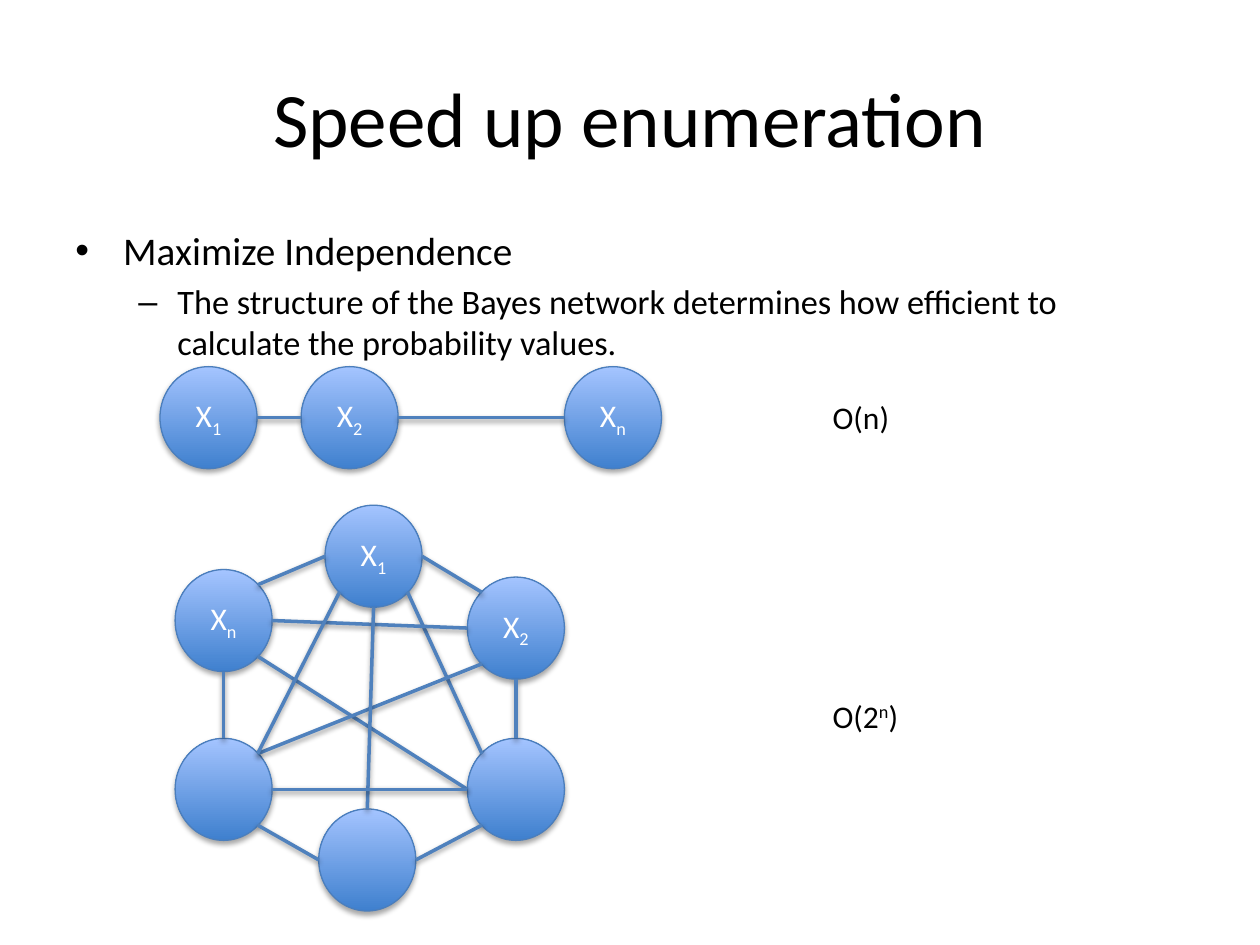
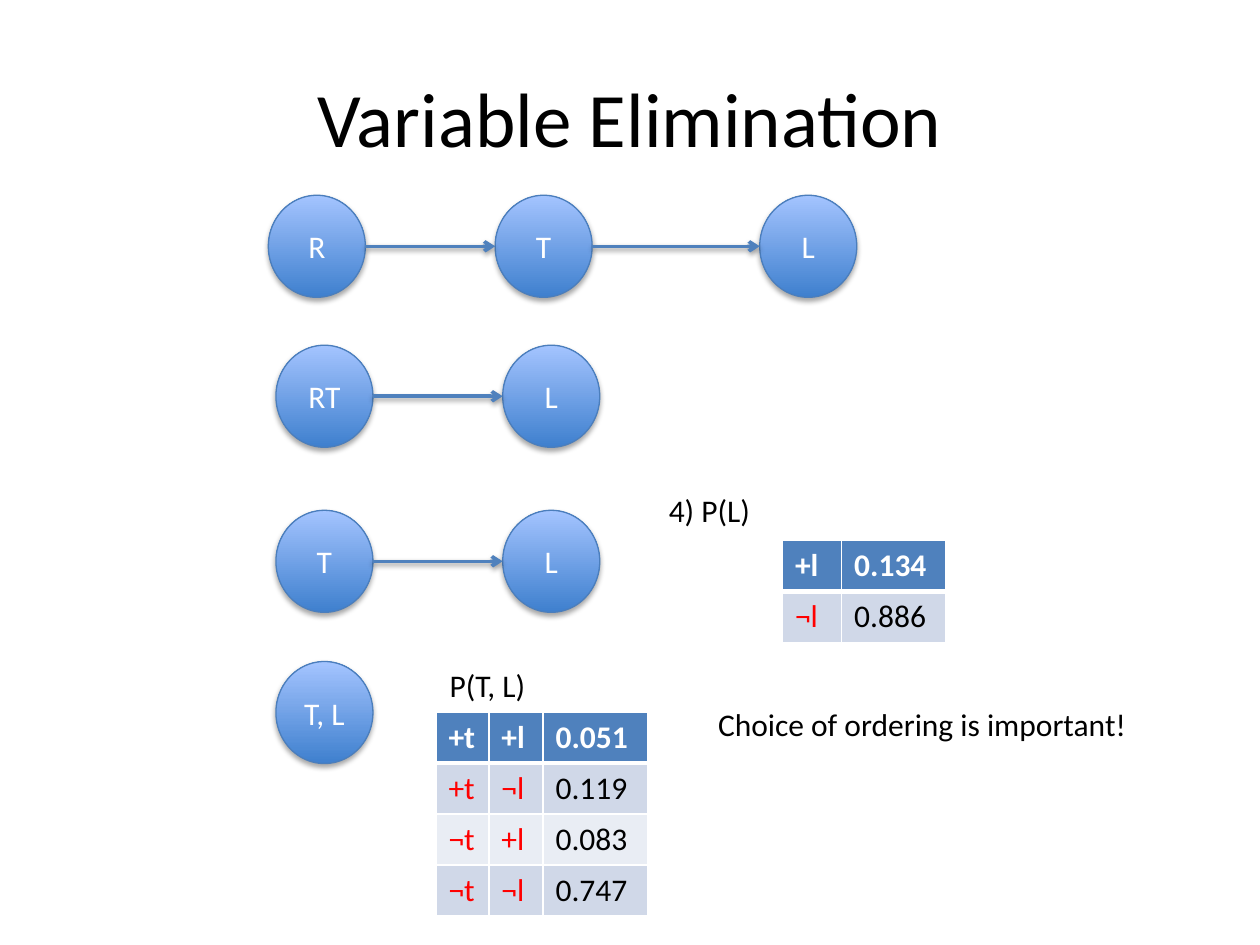
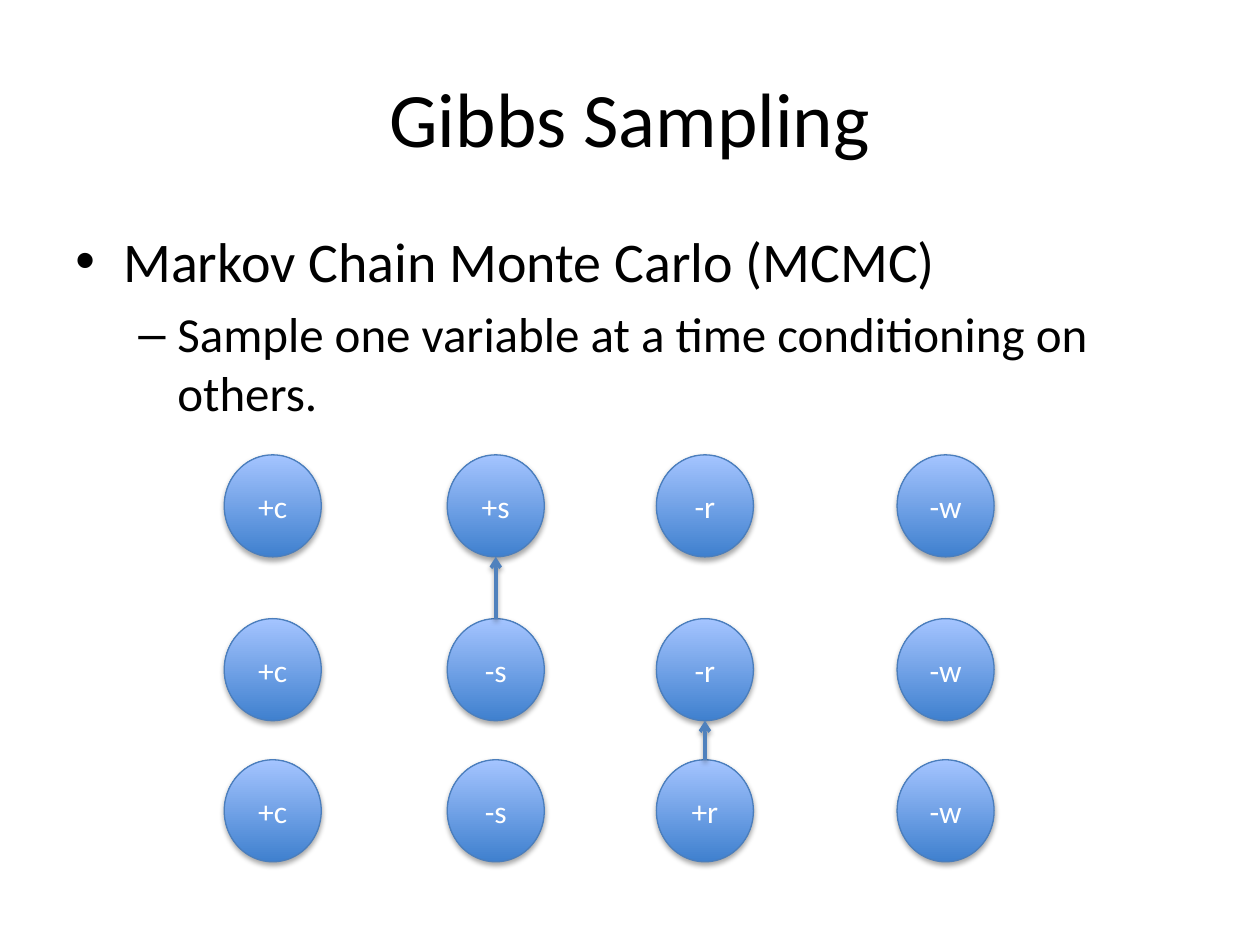
from pptx import Presentation
from pptx import util as u
from pptx.dml.color import RGBColor
from pptx.enum import shapes, text
from pptx.oxml import parse_xml
from pptx.oxml.ns import nsdecls, qn

FONT = "Calibri"
BLACK, WHITE, RED, BLUE = "000000", "FFFFFF", "FF0000", "4F81BD"
NODE_TOP, NODE_BOTTOM, NODE_EDGE = "A4C4FF", "3F80CE", "4B7EBC"
BANDS = ["E9EDF4", "D0D8E8"]
NODE_W, NODE_H = 0.77, 0.81
DIAGONAL = 0.35  # share of the diameter from the centre to a diagonal point

X1, X2, XN = ([("X", 0), (sub, -25)] for sub in "12n")


def rgb(color):
    return RGBColor.from_string(color)


def set_font(p, size, color=BLACK, bold=False):
    p.font.name, p.font.size, p.font.bold = FONT, u.Pt(size), bold
    p.font.color.rgb = rgb(color)


def write(p, content):
    """Content is a string or a list of (text, baseline percent)."""
    runs = [(content, 0)] if isinstance(content, str) else content
    for words, base in runs:
        r = p.add_run()
        r.text = words
        if base:
            r._r.get_or_add_rPr().set("baseline", str(base * 1000))


def add_shadow(sp, alpha, distance):
    pr = sp._element.spPr
    for old in pr.findall(qn("a:effectLst")):
        pr.remove(old)
    pr.append(parse_xml(
        f'<a:effectLst {nsdecls("a")}><a:outerShdw blurRad="{u.Pt(3.1)}" '
        f'dist="{u.Pt(distance)}" dir="5400000" rotWithShape="0">'
        f'<a:srgbClr val="{BLACK}"><a:alpha val="{alpha * 1000}"/></a:srgbClr>'
        '</a:outerShdw></a:effectLst>'))


def textbox(s, box, wrap=True):
    tf = s.shapes.add_textbox(*map(u.Inches, box)).text_frame
    tf.word_wrap = wrap
    return tf


def title(s, words):
    tf = textbox(s, (0.5, 0.3, 9, 1.25))
    tf.vertical_anchor = text.MSO_ANCHOR.MIDDLE
    p = tf.paragraphs[0]
    p.alignment = text.PP_ALIGN.CENTER
    set_font(p, 44)
    write(p, words)


def label(s, box, content, wrap=True):
    p = textbox(s, box, wrap).paragraphs[0]
    set_font(p, 18)
    write(p, content)


def bullets(s, height, point, detail, sizes):
    """A bulleted point with one dashed detail below it."""
    tf = textbox(s, (0.5, 1.75, 9, height))
    levels = [(point, "•", 0.38, -0.38), (detail, "–", 0.81, -0.31)]
    for level, (words, mark, margin, indent) in enumerate(levels):
        p = tf.add_paragraph() if level else tf.paragraphs[0]
        p.level = level
        p.space_before = u.Pt(0.2 * sizes[level])
        pr = p._p.get_or_add_pPr()
        pr.set("marL", str(u.Inches(margin)))
        pr.set("indent", str(u.Inches(indent)))
        pr.append(parse_xml(f'<a:buFont {nsdecls("a")} typeface="Arial"/>'))
        pr.append(parse_xml(f'<a:buChar {nsdecls("a")} char="{mark}"/>'))
        set_font(p, sizes[level])
        write(p, words)


def node(s, left, top, content=""):
    sp = s.shapes.add_shape(shapes.MSO_SHAPE.OVAL,
                            *map(u.Inches, (left, top, NODE_W, NODE_H)))
    sp.fill.gradient()
    sp.fill.gradient_angle = 90
    for stop, position, color in zip(sp.fill.gradient_stops, (0, 1),
                                     (NODE_BOTTOM, NODE_TOP)):
        stop.position, stop.color.rgb = position, rgb(color)
    sp.line.color.rgb, sp.line.width = rgb(NODE_EDGE), u.Pt(0.75)
    add_shadow(sp, 35, 1.8)
    if content:
        tf = sp.text_frame
        tf.vertical_anchor = text.MSO_ANCHOR.MIDDLE
        p = tf.paragraphs[0]
        p.alignment = text.PP_ALIGN.CENTER
        set_font(p, 18, WHITE)
        write(p, content)


def rim(corner, side):
    """Point on a node's rim at a compass side, such as N or SE."""
    reach = DIAGONAL if len(side) == 2 else 0.5
    dx = ("E" in side) - ("W" in side)
    dy = ("S" in side) - ("N" in side)
    return (corner[0] + NODE_W * (0.5 + reach * dx),
            corner[1] + NODE_H * (0.5 + reach * dy))


def link(s, start, end, arrow=False):
    c = s.shapes.add_connector(shapes.MSO_CONNECTOR.STRAIGHT,
                               *map(u.Inches, start + end))
    c.line.color.rgb, c.line.width = rgb(BLUE), u.Pt(2)
    if arrow:
        c.line._get_or_add_ln().append(
            parse_xml(f'<a:tailEnd {nsdecls("a")} type="arrow"/>'))
    add_shadow(c, 38, 1.6)


def chain(s, left, top, nodes, arrow=True):
    """A row of linked nodes, given as (offset from left, content)."""
    corners = [(left + offset, top) for offset, _ in nodes]
    for corner, (_, content) in zip(corners, nodes):
        node(s, *corner, content)
    for a, b in zip(corners, corners[1:]):
        link(s, rim(a, "E"), rim(b, "W"), arrow)


def full_network(s, left, top):
    nodes = {"bottom": (1.14, 2.41, ""), "top": (1.19, 0, X1),
             "left": (0, 0.51, XN), "right": (2.32, 0.57, X2),
             "low right": (2.32, 1.85, ""), "low left": (0, 1.85, "")}
    edges = [("top", "E", "right", "NW"), ("top", "W", "left", "NE"),
             ("top", "SE", "low right", "NW"), ("right", "S", "low right", "N"),
             ("left", "S", "low left", "N"), ("low left", "SE", "bottom", "W"),
             ("bottom", "E", "low right", "SW"), ("left", "E", "right", "W"),
             ("left", "SE", "low right", "W"), ("low left", "NE", "right", "SW"),
             ("bottom", "N", "top", "S"), ("low right", "W", "low left", "E"),
             ("top", "SW", "low left", "NE")]
    corners = {k: (left + x, top + y) for k, (x, y, _) in nodes.items()}
    for name, (_, _, content) in nodes.items():
        node(s, *corners[name], content)
    for a, side_a, b, side_b in edges:
        link(s, rim(corners[a], side_a), rim(corners[b], side_b))


def cell_borders(cell, row):
    widths = {"L": 1, "R": 1, "T": 3 if row == 1 else 1, "B": 1 if row else 3}
    pr = cell._tc.get_or_add_tcPr()
    for side, width in widths.items():
        pr.append(parse_xml(
            f'<a:ln{side} {nsdecls("a")} w="{u.Pt(width)}"><a:solidFill>'
            f'<a:srgbClr val="{WHITE}"/></a:solidFill></a:ln{side}>'))


def probability_table(s, left, top, height, widths, rows):
    """First row is the header; the last column holds the probability."""
    box = map(u.Inches, (left, top, sum(widths), height))
    table = s.shapes.add_table(len(rows), len(widths), *box).table
    for column, width in zip(table.columns, widths):
        column.width = u.Inches(width)
    for i, row in enumerate(rows):
        for j, words in enumerate(row):
            cell = table.cell(i, j)
            cell_borders(cell, i)
            cell.margin_right = u.Inches(0.05)  # keeps narrow cells on one line
            cell.fill.solid()
            cell.fill.fore_color.rgb = rgb(BANDS[i % 2] if i else BLUE)
            value_color = BLACK if j == len(row) - 1 else RED
            p = cell.text_frame.paragraphs[0]
            set_font(p, 18, value_color if i else WHITE, bold=i == 0)
            write(p, words)


def sample_grid(s, left, top):
    columns, rows = (0, 1.77, 3.43, 5.34), (0, 1.3, 2.42)
    samples = [("+c", "+s", "-r", "-w"), ("+c", "-s", "-r", "-w"),
               ("+c", "-s", "+r", "-w")]
    for y, sample in zip(rows, samples):
        for x, value in zip(columns, sample):
            node(s, left + x, top + y, value)
    for i in range(1, len(rows)):
        for x, old, new in zip(columns, samples[i - 1], samples[i]):
            if old != new:
                link(s, rim((left + x, top + rows[i]), "N"),
                     rim((left + x, top + rows[i - 1]), "S"), arrow=True)


def enumeration_slide(s):
    title(s, "Speed up enumeration")
    bullets(s, 1.09, "Maximize Independence",
            "The structure of the Bayes network determines how efficient to "
            "calculate the probability values.", (22.4, 19.6))
    chain(s, 1.27, 2.91, [(0, X1), (1.12, X2), (3.21, XN)], arrow=False)
    label(s, (6.51, 3.11, 0.65, 0.4), "O(n)", wrap=False)
    full_network(s, 1.39, 4.01)
    label(s, (6.51, 5.48, 0.74, 0.4), [("O(2", 0), ("n", 30), (")", 0)],
          wrap=False)


def elimination_slide(s):
    title(s, "Variable Elimination")
    chain(s, 2.13, 1.55, [(0, "R"), (1.8, "T"), (3.9, "L")])
    chain(s, 2.19, 2.74, [(0, "RT"), (1.8, "L")])
    chain(s, 2.19, 4.05, [(0, "T"), (1.8, "L")])
    chain(s, 2.19, 5.25, [(0, "T, L")])
    label(s, (5.21, 3.85, 3.43, 0.4), "4) P(L)")
    probability_table(s, 6.21, 4.29, 0.81, (0.47, 0.83),
                      [("+l", "0.134"), ("¬l", "0.886")])
    label(s, (3.47, 5.24, 0.81, 0.4), "P(T, L)", wrap=False)
    probability_table(s, 3.46, 5.65, 1.62, (0.42, 0.43, 0.83),
                      [("+t", "+l", "0.051"), ("+t", "¬l", "0.119"),
                       ("¬t", "+l", "0.083"), ("¬t", "¬l", "0.747")])
    label(s, (5.6, 5.55, 3.82, 0.4), "Choice of ordering is important!")


def sampling_slide(s):
    title(s, "Gibbs Sampling")
    bullets(s, 1.72, "Markov Chain Monte Carlo (MCMC)",
            "Sample one variable at a time conditioning on others.", (32, 28))
    sample_grid(s, 1.78, 3.61)


def main():
    prs = Presentation()
    prs.slide_width, prs.slide_height = u.Inches(10), u.Inches(7.5)
    for build in (enumeration_slide, elimination_slide, sampling_slide):
        build(prs.slides.add_slide(prs.slide_layouts[6]))
    prs.save("out.pptx")


if __name__ == "__main__":
    main()
